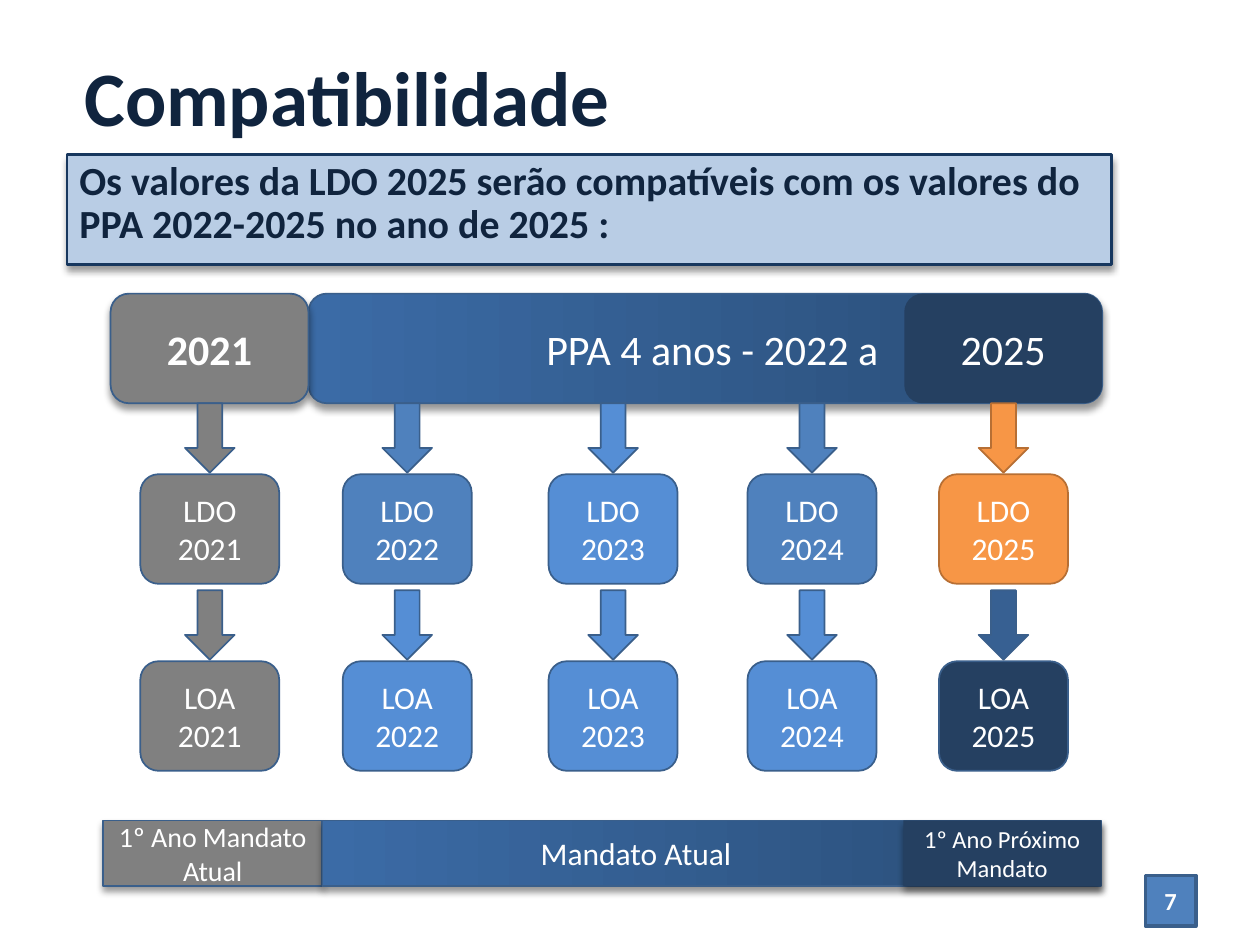
import pptx
import pptx.dml.color
import pptx.enum.shapes
import pptx.enum.text
import pptx.oxml
import pptx.util

Cm = pptx.util.Cm
Pt = pptx.util.Pt
MSO = pptx.enum.shapes.MSO_SHAPE
ALIGN = pptx.enum.text.PP_ALIGN
ANCHOR = pptx.enum.text.MSO_ANCHOR

SHADOW = (
    '<a:outerShdw xmlns:a="http://schemas.openxmlformats.org/drawingml/2006/main" '
    'blurRad="50800" dist="38100" dir="5400000" rotWithShape="0">'
    '<a:srgbClr val="000000"><a:alpha val="40000"/></a:srgbClr></a:outerShdw>'
)
GRADIENT = ("294C74", "3B6BA6")
GREY, BLUE, LIGHT, ORANGE, NAVY = "808080", "4F81BD", "558ED5", "F79646", "254061"
EDGE, INK = "3A5F8B", "10243E"


def rgb(value):
    return pptx.dml.color.RGBColor.from_string(value)


def add_box(text, at, kind=None, fill=None, line=EDGE, weight=1, shadow=False,
            size=18, color="FFFFFF", bold=False, align=ALIGN.CENTER,
            anchor=ANCHOR.MIDDLE, spacing=None, left=0.25, right=0.25):
    frame = [Cm(v) for v in at]
    if kind is None:
        sp = s.shapes.add_textbox(*frame)
    else:
        sp = s.shapes.add_shape(kind, *frame)
        sp.shadow.inherit = False
        if shadow:
            sp._element.spPr.effectLst.append(pptx.oxml.parse_xml(SHADOW))
        if isinstance(fill, tuple):
            sp.fill.gradient()
            sp.fill.gradient_angle = 180
            for stop, tone in zip(sp.fill.gradient_stops, fill):
                stop.color.rgb = rgb(tone)
        else:
            sp.fill.solid()
            sp.fill.fore_color.rgb = rgb(fill)
        if line:
            sp.line.color.rgb = rgb(line)
            sp.line.width = Pt(weight)
        else:
            sp.line.fill.background()
    if text:
        tf = sp.text_frame
        tf.word_wrap = True
        tf.vertical_anchor = anchor
        tf.margin_left, tf.margin_right = Cm(left), Cm(right)
        p = tf.paragraphs[0]
        p.alignment = align
        p.line_spacing = spacing
        r = p.add_run()
        r.text = text
        r.font.name = "Calibri"
        r.font.size = Pt(size)
        r.font.bold = bold
        r.font.color.rgb = rgb(color)
    return sp


prs = pptx.Presentation()
prs.slide_width, prs.slide_height = Cm(25.4), Cm(19.05)
s = prs.slides.add_slide(prs.slide_layouts[6])

add_box("Compatibilidade", (1.45, 0.74, 22.86, 2.36), size=44, color=INK,
        bold=True, align=ALIGN.LEFT)
add_box("Os valores da LDO 2025 serão compatíveis com os valores do PPA 2022-2025 no ano de 2025 :",
        (1.35, 3.12, 21.06, 2.21), MSO.RECTANGLE, "B9CDE5", line="17375E",
        weight=1.5, shadow=True, size=22.8, color=INK, bold=True,
        align=ALIGN.LEFT, anchor=ANCHOR.TOP, spacing=0.9)

add_box("PPA 4 anos - 2022 a", (6.22, 5.92, 16, 2.21), MSO.ROUNDED_RECTANGLE,
        GRADIENT, shadow=True, size=24, align=ALIGN.RIGHT, right=4.4)
add_box("2021", (2.23, 5.92, 3.99, 2.21), MSO.ROUNDED_RECTANGLE, GREY,
        shadow=True, size=24, bold=True)
add_box("2025", (18.23, 5.92, 3.99, 2.21), MSO.ROUNDED_RECTANGLE, NAVY,
        line=None, size=24)

columns = [
    (2021, 4.23, 2.8, GREY, EDGE, GREY, GREY),
    (2022, 8.21, 2.6, BLUE, EDGE, LIGHT, LIGHT),
    (2023, 12.36, 2.6, LIGHT, EDGE, LIGHT, LIGHT),
    (2024, 16.37, 2.6, BLUE, EDGE, LIGHT, LIGHT),
    (2025, 20.23, 2.6, ORANGE, "B76F34", "376092", NAVY),
]
for year, mid, width, ldo, ldo_edge, arrow, loa in columns:
    steps = [("LDO", 8.13, ldo, ldo, ldo_edge), ("LOA", 11.9, arrow, loa, EDGE)]
    for name, top, arrow_fill, fill, edge in steps:
        add_box("", (mid - 0.5, top, 1, 1.4), MSO.DOWN_ARROW, arrow_fill, line=edge)
        add_box(f"{name} {year}", (mid - width / 2, top + 1.43, width, 2.21),
                MSO.ROUNDED_RECTANGLE, fill, line=edge)

add_box("1º Ano Mandato Atual", (2.08, 16.54, 4.42, 1.32), MSO.RECTANGLE, GREY,
        shadow=True, size=16)
add_box("Mandato Atual", (6.5, 16.54, 15.7, 1.32), MSO.RECTANGLE, GRADIENT,
        shadow=True, align=ALIGN.LEFT, left=4.4)
add_box("1º Ano Próximo Mandato", (18.21, 16.54, 3.99, 1.32), MSO.RECTANGLE, NAVY,
        line=None, shadow=True, size=14)
add_box("7", (23.09, 17.65, 1.02, 1.02), MSO.RECTANGLE, BLUE, weight=2, size=14,
        bold=True)

prs.save("out.pptx")
